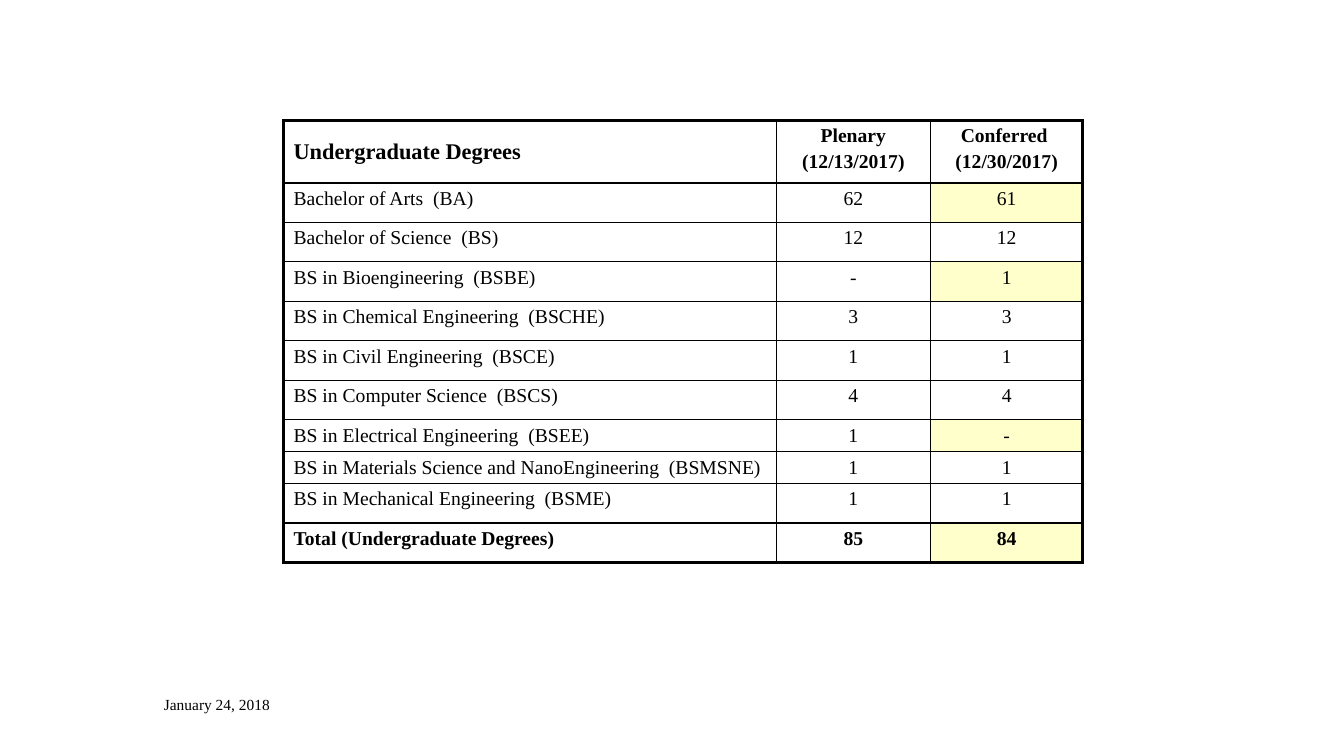
"""Build a slide with a table of undergraduate degrees, plenary against conferred."""
from dataclasses import dataclass

from lxml import etree
from pptx import Presentation
from pptx.dml.color import RGBColor
from pptx.enum.text import MSO_ANCHOR, PP_ALIGN
from pptx.oxml.ns import qn
from pptx.util import Pt

LEFT, CENTER = PP_ALIGN.LEFT, PP_ALIGN.CENTER
TOP, MIDDLE = MSO_ANCHOR.TOP, MSO_ANCHOR.MIDDLE
FONT = "Times New Roman"
BLACK, WHITE, CHANGED = "000000", "FFFFFF", "FFFFCC"
THIN, THICK = 1, 2.25
COLUMN_WIDTHS = (352, 110.2, 108.8)
HEADER_HEIGHT, ROW_HEIGHT, COMPACT_HEIGHT = 44.7, 28.2, 22.8


@dataclass
class Row:
    label: str
    plenary: str
    conferred: str
    height: float = ROW_HEIGHT
    bold: bool = False
    label_size: float = 14
    label_anchor: MSO_ANCHOR = TOP
    header: bool = False

    @property
    def texts(self) -> tuple[str, str, str]:
        return self.label, self.plenary, self.conferred

    @property
    def changed(self) -> bool:
        return not self.header and self.plenary != self.conferred


ROWS = (
    Row("Undergraduate Degrees", "Plenary\n(12/13/2017)", "Conferred \n(12/30/2017)",
        HEADER_HEIGHT, bold=True, label_size=16, label_anchor=MIDDLE, header=True),
    Row("Bachelor of Arts  (BA)", "62", "61"),
    Row("Bachelor of Science  (BS)", "12", "12"),
    Row("BS in Bioengineering  (BSBE)", "-", "1"),
    Row("BS in Chemical Engineering  (BSCHE)", "3", "3"),
    Row("BS in Civil Engineering  (BSCE)", "1", "1"),
    Row("BS in Computer Science  (BSCS)", "4", "4"),
    Row("BS in Electrical Engineering  (BSEE)", "1", "-", COMPACT_HEIGHT),
    Row("BS in Materials Science and NanoEngineering  (BSMSNE)", "1", "1", COMPACT_HEIGHT),
    Row("BS in Mechanical Engineering  (BSME)", "1", "1"),
    Row("Total (Undergraduate Degrees)", "85", "84", bold=True),
)


def color(value: str) -> RGBColor:
    return RGBColor.from_string(value)


def write(frame, text: str, *, size: float, bold: bool = False, align=LEFT) -> None:
    for index, line in enumerate(text.split("\n")):
        para = frame.add_paragraph() if index else frame.paragraphs[0]
        para.alignment = align
        if index:
            para.space_before = Pt(0.2 * size)
        span = para.add_run()
        span.text = line
        span.font.name = FONT
        span.font.size = Pt(size)
        span.font.bold = bold
        span.font.color.rgb = color(BLACK)


def set_borders(cell, **widths: float) -> None:
    properties = cell._tc.get_or_add_tcPr()
    for side in ("L", "R", "T", "B"):
        line = etree.SubElement(properties, qn(f"a:ln{side}"), w=str(Pt(widths[side])))
        fill = etree.SubElement(line, qn("a:solidFill"))
        etree.SubElement(fill, qn("a:srgbClr"), val=BLACK)


def draw_table(page, rows: tuple[Row, ...], left: float, top: float) -> None:
    frame = page.shapes.add_table(
        len(rows), len(COLUMN_WIDTHS), Pt(left), Pt(top),
        Pt(sum(COLUMN_WIDTHS)), Pt(sum(row.height for row in rows)))
    table = frame.table
    table.first_row = table.horz_banding = False
    for column, width in zip(table.columns, COLUMN_WIDTHS):
        column.width = Pt(width)
    last_row, last_column = len(rows) - 1, len(COLUMN_WIDTHS) - 1
    for r, row in enumerate(rows):
        table.rows[r].height = Pt(row.height)
        for c, text in enumerate(row.texts):
            cell = table.cell(r, c)
            write(cell.text_frame, text, size=14 if c else row.label_size,
                  bold=row.bold, align=CENTER if c else LEFT)
            cell.vertical_anchor = TOP if c else row.label_anchor
            set_borders(
                cell,
                L=THIN if c else THICK,
                R=THICK if c == last_column else THIN,
                T=THICK if r in (0, 1, last_row) else THIN,
                B=THICK if r in (0, last_row - 1, last_row) else THIN)
            cell.fill.solid()
            highlight = row.changed and c == last_column
            cell.fill.fore_color.rgb = color(CHANGED if highlight else WHITE)


def draw_date(page, text: str) -> None:
    box = page.shapes.add_textbox(Pt(110), Pt(484.5), Pt(246), Pt(37.5))
    box.text_frame.word_wrap = True
    box.text_frame.vertical_anchor = MIDDLE
    write(box.text_frame, text, size=11)


def main() -> None:
    deck = Presentation()
    deck.slide_width, deck.slide_height = Pt(960), Pt(540)
    page = deck.slides.add_slide(deck.slide_layouts[6])
    draw_table(page, ROWS, left=202.5, top=86)
    draw_date(page, "January 24, 2018")
    deck.save("out.pptx")


if __name__ == "__main__":
    main()
